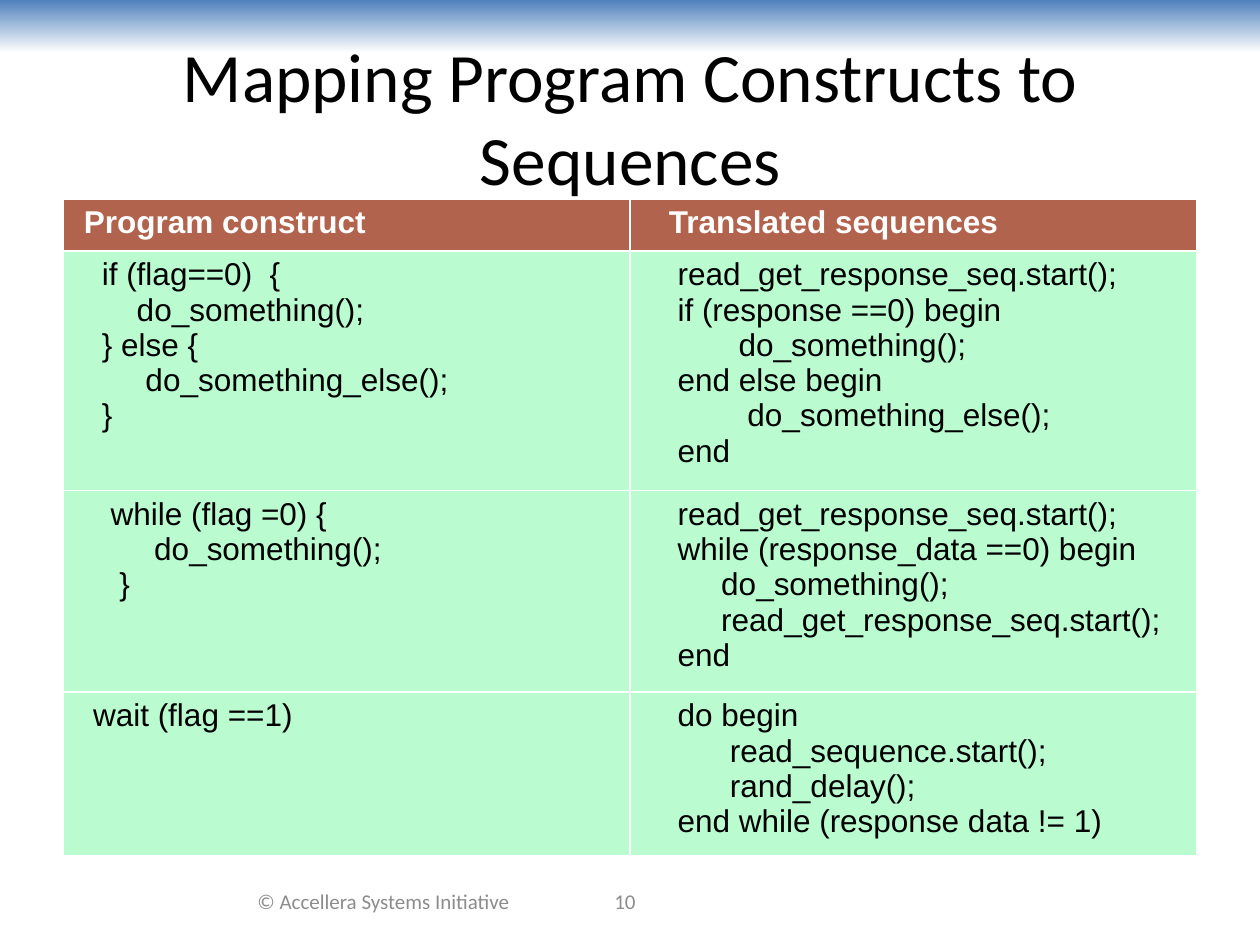
"""Build the slide that maps program constructs to sequences."""
from pptx import Presentation, util as u
from pptx.dml.color import RGBColor
from pptx.enum import shapes, text

PX = 914400 / 126
THEME = {
    "band": ("4F81BD", "FFFFFF"),
    "header_fill": "B2634E",
    "code_fill": "BAFCD0",
    "title": dict(name="Calibri", size=39.6, color="000000"),
    "footer": dict(name="Calibri", size=12, color="8C8C8C"),
    "header": dict(name="Arial", size=18, color="FFFFFF", bold=True),
    "code": dict(name="Arial", size=18, color="000000", bold=False),
}

LABELS = [
    ("Mapping Program Constructs to Sequences", (32, 38, 1197, 157), "title"),
    ("© Accellera Systems Initiative", (231, 876, 305, 50), "footer"),
    ("10", (504, 876, 242, 50), "footer"),
]
HEADERS = [("Program construct", 21), ("Translated sequences", 39)]
CODE = [
    (
        """   if (flag==0)  {
       do_something();
   } else {
        do_something_else();
   }""",
        """    read_get_response_seq.start();
    if (response ==0) begin
           do_something();
    end else begin
            do_something_else();
    end""",
    ),
    (
        """    while (flag =0) {
         do_something();
     }""",
        """    read_get_response_seq.start();
    while (response_data ==0) begin
         do_something();
         read_get_response_seq.start();
    end""",
    ),
    (
        """  wait (flag ==1)""",
        """    do begin
          read_sequence.start();
          rand_delay();
    end while (response data != 1)""",
    ),
]
TABLE_LEFT, TABLE_TOP, COL_W = 63, 199, 567
HEADER_H, LINE_H, CELL_PAD = 52, 35, 13


def px(n):
    return u.Emu(round(n * PX))


def rgb(value):
    return RGBColor.from_string(value)


def write(tf, content, style, align=None):
    values = dict(THEME[style])
    color = rgb(values.pop("color"))
    values["size"] = u.Pt(values["size"])
    tf.text = content
    for p in tf.paragraphs:
        p.alignment = align
        for r in p.runs:
            for key, value in values.items():
                setattr(r.font, key, value)
            r.font.color.rgb = color


def fill_cell(cell, content, style):
    write(cell.text_frame, content, style)
    cell.fill.solid()
    cell.fill.fore_color.rgb = rgb(THEME[style + "_fill"])


def add_band(s):
    sp = s.shapes.add_shape(shapes.MSO_SHAPE.RECTANGLE, 0, 0, px(1260), px(53))
    sp.shadow.inherit = False
    sp.line.fill.background()
    sp.fill.gradient()
    sp.fill.gradient_angle = 270
    for stop, color, position in zip(sp.fill.gradient_stops, THEME["band"], (0, 1)):
        stop.color.rgb = rgb(color)
        stop.position = position


def add_label(s, content, box, style):
    tf = s.shapes.add_textbox(*map(px, box)).text_frame
    tf.word_wrap = True
    tf.vertical_anchor = text.MSO_ANCHOR.MIDDLE
    write(tf, content, style, text.PP_ALIGN.CENTER)


def add_code_table(s):
    line_counts = [max(len(code.splitlines()) for code in row) for row in CODE]
    heights = [HEADER_H] + [n * LINE_H + CELL_PAD for n in line_counts]
    table = s.shapes.add_table(
        len(heights), len(HEADERS), px(TABLE_LEFT), px(TABLE_TOP),
        px(COL_W * len(HEADERS)), px(sum(heights))).table
    for row, height in zip(table.rows, heights):
        row.height = px(height)
    for i, (header, margin) in enumerate(HEADERS):
        table.columns[i].width = px(COL_W)
        table.cell(0, i).margin_left = px(margin)
        fill_cell(table.cell(0, i), header, "header")
    for i, row in enumerate(CODE, 1):
        for j, code in enumerate(row):
            fill_cell(table.cell(i, j), code, "code")


def main():
    prs = Presentation()
    prs.slide_width, prs.slide_height = px(1260), px(945)
    s = prs.slides.add_slide(prs.slide_layouts[6])
    add_band(s)
    for label in LABELS:
        add_label(s, *label)
    add_code_table(s)
    prs.save("out.pptx")


if __name__ == "__main__":
    main()
